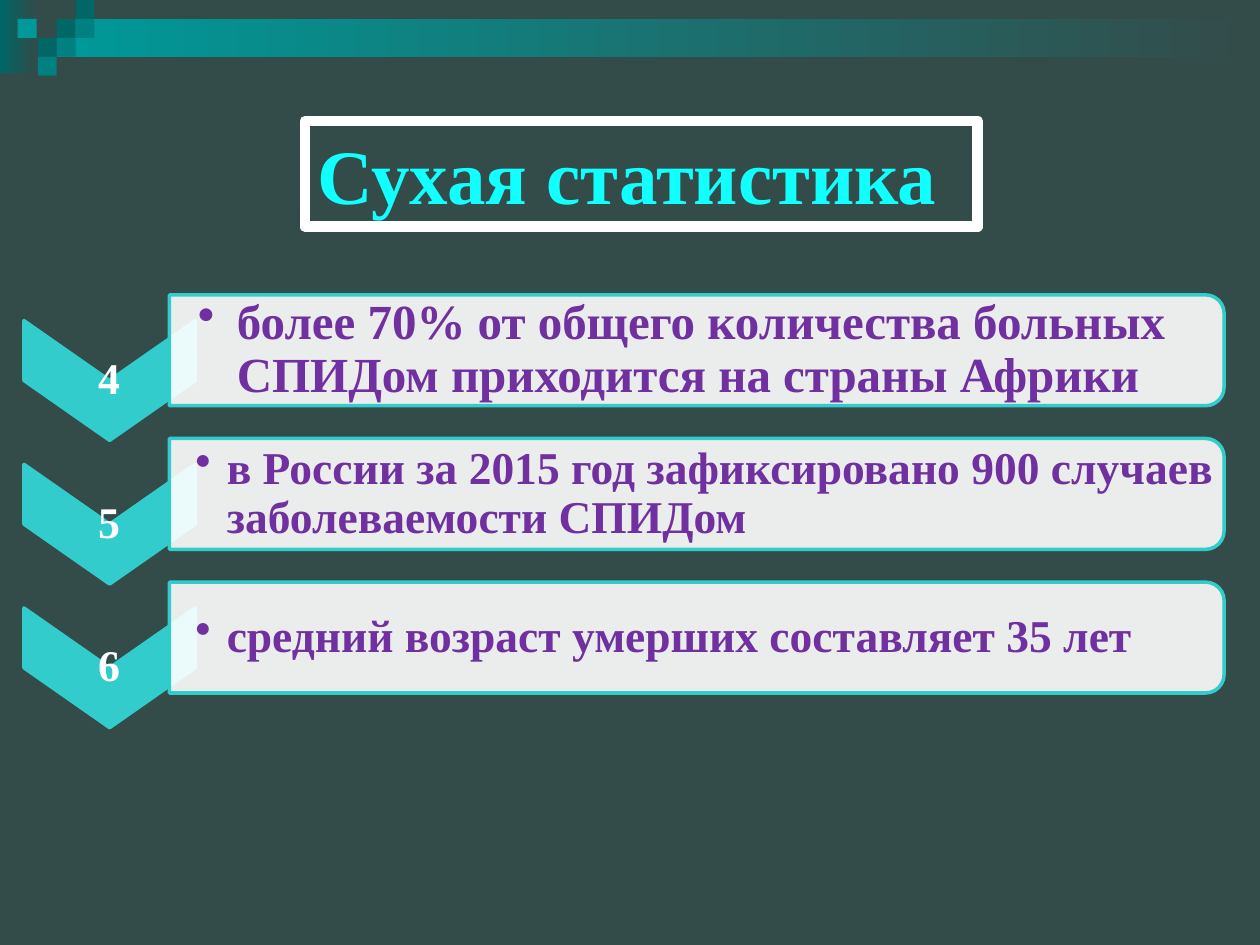
import dataclasses

import pptx
import pptx.dml.color
import pptx.enum.shapes
import pptx.enum.text
import pptx.oxml
import pptx.oxml.ns
import pptx.util

Inches = pptx.util.Inches
Shapes = pptx.enum.shapes.MSO_SHAPE
Align = pptx.enum.text.PP_ALIGN
Anchor = pptx.enum.text.MSO_ANCHOR


@dataclasses.dataclass(frozen=True)
class Theme:
    font: str = "Times New Roman"
    background: str = "334B49"
    dark_teal: str = "006666"
    mid_teal: str = "008080"
    teal: str = "009999"
    accent: str = "33CCCC"
    white: str = "FFFFFF"
    title: str = "12FFFF"
    body: str = "7030A0"
    title_size: int = 44
    number_size: int = 25
    first_size: int = 28
    body_size: int = 26
    title_line: int = 6
    accent_line: int = 2
    panel_opacity: int = 90


def rgb(value):
    return pptx.dml.color.RGBColor.from_string(value)


class SlideBuilder:
    def __init__(self, page, theme):
        self.page = page
        self.theme = theme
        page.background.fill.solid()
        page.background.fill.fore_color.rgb = rgb(theme.background)

    def shape(self, kind, left, top, width, height, color=None, outlined=False):
        shape = self.page.shapes.add_shape(
            kind, Inches(left), Inches(top), Inches(width), Inches(height))
        shape.shadow.inherit = False
        if color:
            shape.fill.solid()
            shape.fill.fore_color.rgb = rgb(color)
        if outlined:
            self.outline(shape, self.theme.accent, self.theme.accent_line)
        else:
            shape.line.fill.background()
        return shape

    def outline(self, shape, color, width):
        shape.line.color.rgb = rgb(color)
        shape.line.width = pptx.util.Pt(width)

    def fade(self, left, top, width, height, color):
        shape = self.shape(Shapes.RECTANGLE, left, top, width, height)
        shape.fill.gradient()
        shape.fill.gradient_angle = 0
        stops = shape.fill.gradient_stops
        for stop, position, shade in zip(stops, (0, 1), (color, self.theme.background)):
            stop.position = position
            stop.color.rgb = rgb(shade)

    def turned(self, kind, center_x, center_y, width, height, color):
        shape = self.shape(kind, center_x - height / 2, center_y - width / 2,
                           height, width, color, outlined=True)
        shape.rotation = 90
        return shape

    def panel(self, center_x, center_y, width, height):
        shape = self.turned(Shapes.ROUND_2_SAME_RECTANGLE, center_x, center_y,
                            height, width, self.theme.white)
        shape.left, shape.top = Inches(center_x - height / 2), Inches(center_y - width / 2)
        shape.width, shape.height = Inches(height), Inches(width)
        color = shape.fill._xPr.find(".//" + pptx.oxml.ns.qn("a:srgbClr"))
        color.append(pptx.oxml.parse_xml(
            f'<a:alpha {pptx.oxml.ns.nsdecls("a")} val="{self.theme.panel_opacity * 1000}"/>'))

    def style(self, para, size, color):
        para.font.name = self.theme.font
        para.font.size = pptx.util.Pt(size)
        para.font.bold = True
        para.font.color.rgb = rgb(color)

    def title(self, text, left, top, width, height):
        box = self.page.shapes.title
        box.left, box.top = Inches(left), Inches(top)
        box.width, box.height = Inches(width), Inches(height)
        self.outline(box, self.theme.white, self.theme.title_line)
        frame = box.text_frame
        frame.text = text
        frame.auto_size = pptx.enum.text.MSO_AUTO_SIZE.NONE
        frame.vertical_anchor = Anchor.TOP
        para = frame.paragraphs[0]
        para.alignment = Align.LEFT
        self.style(para, self.theme.title_size, self.theme.title)

    def text(self, text, left, center_y, width, height, size, color, inset=0.02):
        box = self.page.shapes.add_textbox(
            Inches(left), Inches(center_y - height / 2), Inches(width), Inches(height))
        frame = box.text_frame
        frame.word_wrap = True
        frame.vertical_anchor = Anchor.MIDDLE
        frame.margin_top = frame.margin_bottom = frame.margin_right = Inches(0.02)
        frame.margin_left = Inches(inset)
        frame.text = text
        para = frame.paragraphs[0]
        para.line_spacing = 0.9
        self.style(para, size, color)
        return para

    def number(self, text, left, center_y):
        para = self.text(text, left, center_y, 0.95, 0.41,
                         self.theme.number_size, self.theme.white)
        para.alignment = Align.CENTER

    def bullet(self, text, left, center_y, size, inset, indent):
        para = self.text(text, left, center_y, 8.32, 0.8, size, self.theme.body, inset)
        properties = para._p.get_or_add_pPr()
        properties.set("marL", str(Inches(indent)))
        properties.set("indent", str(-Inches(indent)))
        properties.append(pptx.oxml.parse_xml(
            f'<a:buChar {pptx.oxml.ns.nsdecls("a")} char="•"/>'))
        default = properties.find(pptx.oxml.ns.qn("a:defRPr"))
        if default is not None:
            properties.append(default)


def main():
    theme = Theme()
    deck = pptx.Presentation()
    deck.slide_width, deck.slide_height = Inches(10), Inches(7.5)
    builder = SlideBuilder(deck.slides.add_slide(deck.slide_layouts[5]), theme)

    builder.fade(0, 0, 0.31, 0.58, theme.dark_teal)
    builder.fade(0.45, 0.15, 9.55, 0.3, theme.teal)
    tiles = [
        (0.45, 0.15, theme.dark_teal), (0.6, 0, theme.dark_teal),
        (0.6, 0.15, theme.mid_teal), (0.3, 0.3, theme.dark_teal),
        (0.14, 0.15, theme.teal), (0.45, 0.3, theme.mid_teal),
        (0.3, 0.45, theme.mid_teal),
    ]
    for left, top, color in tiles:
        builder.shape(Shapes.RECTANGLE, left, top, 0.15, 0.15, color)

    builder.title("Сухая статистика", 2.42, 0.96, 5.34, 0.84)

    facts = [
        ("4", "более 70% от общего количества больных СПИДом приходится на страны Африки",
         theme.first_size, 0.22, 0.31),
        ("5", "в\u00a0России за\u00a02015 год зафиксировано 900 случаев заболеваемости СПИДом",
         theme.body_size, 0.2, 0.25),
        ("6", "средний возраст умерших составляет 35 лет", theme.body_size, 0.2, 0.25),
    ]
    first_center, row_pitch, number_drop = 2.78, 1.14, 0.24
    for row, (number, fact, size, inset, indent) in enumerate(facts):
        center_y = first_center + row * row_pitch
        builder.turned(Shapes.CHEVRON, 0.87, center_y + number_drop, 1.36, 0.95, theme.accent)
        builder.number(number, 0.39, center_y + number_drop)
        builder.panel(5.53, center_y, 8.37, 0.88)
        builder.bullet(fact, 1.35, center_y, size, inset, indent)

    deck.save("out.pptx")


if __name__ == "__main__":
    main()
